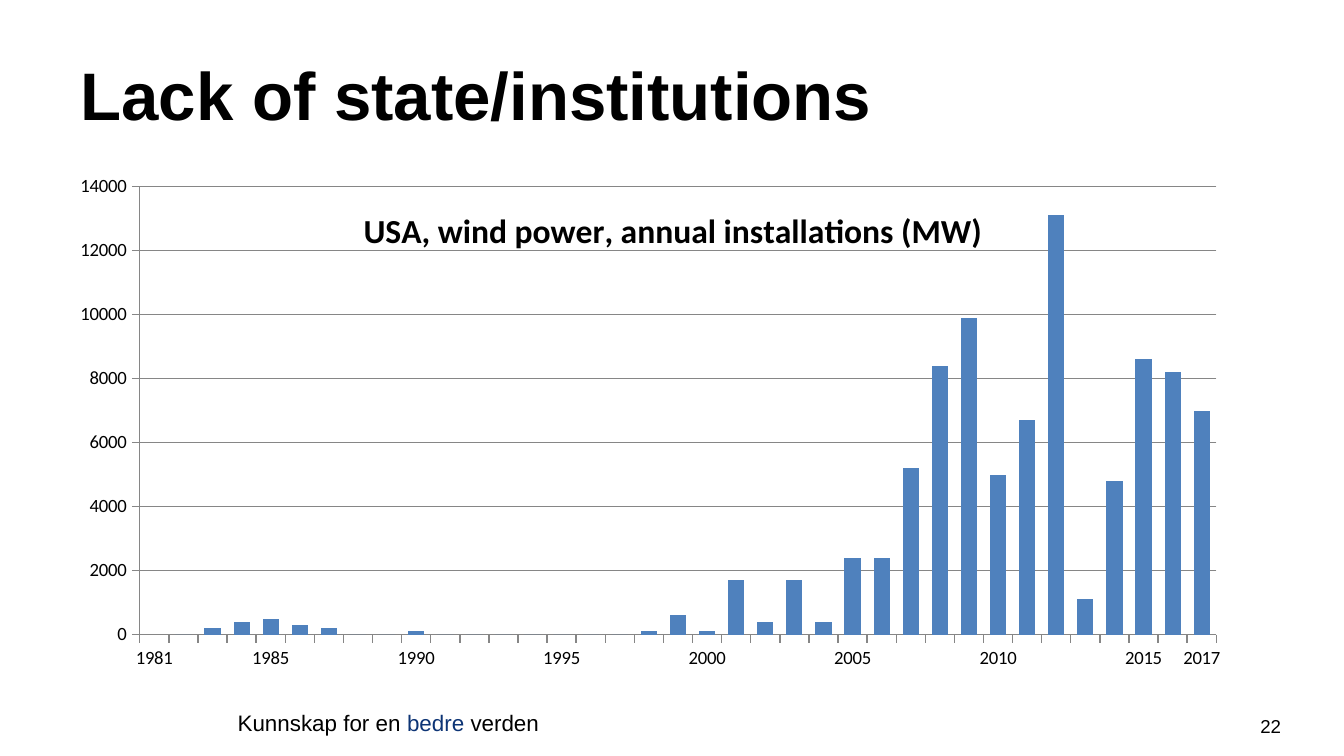
from lxml.etree import SubElement
from pptx import Presentation
from pptx.chart.data import CategoryChartData
from pptx.dml.color import RGBColor
from pptx.enum.chart import XL_CHART_TYPE as ChartType, XL_TICK_MARK as TickMark
from pptx.enum.text import MSO_ANCHOR as Anchor, PP_ALIGN as Align
from pptx.oxml import parse_xml
from pptx.oxml.ns import nsdecls, qn
from pptx.util import Pt

BLACK = RGBColor(0x00, 0x00, 0x00)
NAVY = RGBColor(0x0D, 0x34, 0x75)
BLUE = RGBColor(0x4F, 0x81, 0xBD)
GRAY = RGBColor(0x86, 0x86, 0x86)

# left, top, width, height, size, bold, alignment, anchor, runs
TEXTS = [
    (120.24, 376.56, 177.12, 21.6, 12, False, Align.LEFT, Anchor.TOP,
     [("Kunnskap for en ", BLACK), ("bedre ", NAVY), ("verden", BLACK)]),
    (667.44, 379.44, 26.64, 21.6, 10, False, Align.CENTER, Anchor.TOP,
     [("22", BLACK)]),
    (36, 16.56, 648, 67.68, 36, True, Align.LEFT, Anchor.MIDDLE,
     [("Lack of state/institutions", BLACK)]),
]

CHART_TITLE = "USA, wind power, annual installations (MW)"
FIRST_YEAR, LAST_YEAR = 1981, 2017
INSTALLATIONS = [
    None, 0, 200, 400, 500, 300, 200, 0, 0, 100,
    0, 0, 0, 0, 0, 0, 0, 100, 600, 100,
    1700, 400, 1700, 400, 2400, 2400, 5200, 8400, 9900, 5000,
    6700, 13100, 1100, 4800, 8600, 8200, 7000,
]


def add_text(slide, left, top, width, height, size, bold, alignment, anchor, runs):
    box = slide.shapes.add_textbox(Pt(left), Pt(top), Pt(width), Pt(height))
    frame = box.text_frame
    frame.word_wrap = True
    frame.vertical_anchor = anchor
    paragraph = frame.paragraphs[0]
    paragraph.alignment = alignment
    for text, color in runs:
        run = paragraph.add_run()
        run.text = text
        run.font.name = "Arial"
        run.font.size = Pt(size)
        run.font.bold = bold
        run.font.color.rgb = color


def manual_layout(**values):
    """Return a c:layout element with the given children of c:manualLayout."""
    layout = parse_xml(f"<c:layout {nsdecls('c')}><c:manualLayout/></c:layout>")
    for name, value in values.items():
        SubElement(layout[0], qn(f"c:{name}")).set("val", str(value))
    return layout


def remove_layout(element):
    for layout in element.findall(qn("c:layout")):
        element.remove(layout)


def year_label(year):
    shown = year in (FIRST_YEAR, LAST_YEAR) or year % 5 == 0
    return str(year) if shown else ""


def add_installations_chart(slide):
    data = CategoryChartData()
    data.categories = [year_label(y) for y in range(FIRST_YEAR, LAST_YEAR + 1)]
    data.add_series("Series 1", INSTALLATIONS)
    chart = slide.shapes.add_chart(
        ChartType.COLUMN_CLUSTERED, Pt(36), Pt(94.32), Pt(648), Pt(267.12), data).chart
    chart.has_legend = False
    chart.font.name = "Calibri"
    chart.font.size = Pt(10)
    chart.font.color.rgb = BLACK

    plot = chart.plots[0]
    plot.gap_width = 80
    plot.vary_by_categories = False
    fill = plot.series[0].format.fill
    fill.solid()
    fill.fore_color.rgb = BLUE

    years, megawatts = chart.category_axis, chart.value_axis
    for axis in (years, megawatts):
        axis.major_tick_mark = TickMark.OUTSIDE
        axis.minor_tick_mark = TickMark.NONE
        axis.format.line.color.rgb = GRAY
        axis.format.line.width = Pt(0.75)
    megawatts.minimum_scale = 0
    megawatts.maximum_scale = 14000
    megawatts.major_unit = 2000
    megawatts.has_major_gridlines = True
    gridline = megawatts.major_gridlines.format.line
    gridline.color.rgb = GRAY
    gridline.width = Pt(0.75)

    title = chart.chart_title
    title.text_frame.text = CHART_TITLE
    font = title.text_frame.paragraphs[0].runs[0].font
    font.name = "Calibri"
    font.size = Pt(18)
    font.bold = True
    font.color.rgb = BLACK

    title_element = title._element
    remove_layout(title_element)
    title_element.find(qn("c:tx")).addnext(
        manual_layout(xMode="edge", yMode="edge", x=0.24, y=0.05))
    title_element.find(qn("c:overlay")).set("val", "1")

    plot_area = chart._chartSpace.chart.plotArea
    remove_layout(plot_area)
    plot_area.insert(0, manual_layout(
        layoutTarget="inner", xMode="edge", yMode="edge",
        x=0.06, y=0.02, w=0.89, h=0.9))


def main():
    presentation = Presentation()
    presentation.slide_width = Pt(720)
    presentation.slide_height = Pt(405)
    slide = presentation.slides.add_slide(presentation.slide_layouts[6])
    for text in TEXTS:
        add_text(slide, *text)
    add_installations_chart(slide)
    presentation.save("out.pptx")


if __name__ == "__main__":
    main()
